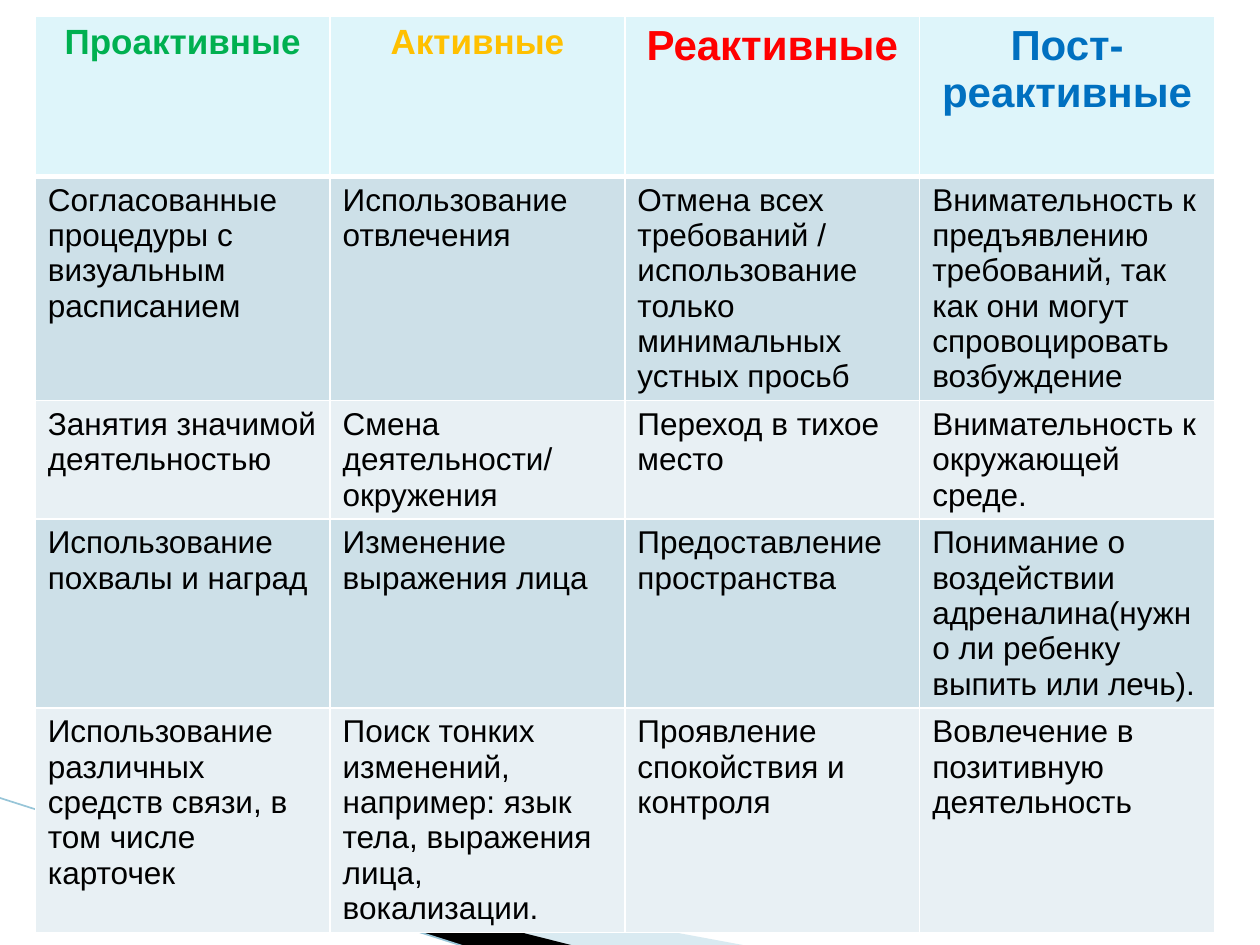
from lxml import etree
from pptx import Presentation
from pptx.dml.color import RGBColor
from pptx.enum.shapes import MSO_CONNECTOR
from pptx.enum.text import PP_ALIGN
from pptx.oxml.ns import qn
from pptx.util import Inches, Pt

CENTER, LEFT = PP_ALIGN.CENTER, PP_ALIGN.LEFT
STRAIGHT = MSO_CONNECTOR.STRAIGHT

WHITE = RGBColor(0xFF, 0xFF, 0xFF)
BLACK = RGBColor(0x00, 0x00, 0x00)
GREEN = RGBColor(0x00, 0xB0, 0x50)
AMBER = RGBColor(0xFF, 0xC0, 0x00)
RED = RGBColor(0xFF, 0x00, 0x00)
BLUE = RGBColor(0x00, 0x70, 0xC0)
HEADER_FILL = RGBColor(0xDE, 0xF5, 0xFA)
DARK_BAND = RGBColor(0xCD, 0xE0, 0xE8)
LIGHT_BAND = RGBColor(0xE8, 0xF0, 0xF4)
SWOOSH = RGBColor(0xA0, 0xCB, 0xDC)
SWOOSH_EDGE = RGBColor(0x97, 0xC5, 0xD8)

HEADINGS = [
    ("Проактивные", 20, GREEN),
    ("Активные", 20, AMBER),
    ("Реактивные", 24, RED),
    ("Пост-реактивные", 24, BLUE),
]
STRATEGIES = [
    ("Согласованные процедуры с визуальным расписанием",
     "Использование отвлечения",
     "Отмена всех требований / использование только минимальных устных просьб",
     "Внимательность к предъявлению требований, так как они могут "
     "спровоцировать возбуждение"),
    ("Занятия значимой деятельностью",
     "Смена деятельности/ окружения",
     "Переход в тихое место",
     "Внимательность к окружающей среде."),
    ("Использование похвалы и наград",
     "Изменение выражения лица",
     "Предоставление пространства",
     "Понимание о воздействии адреналина(нужно ли ребенку выпить или лечь)."),
    ("Использование различных средств связи, в том числе карточек",
     "Поиск тонких изменений, например: язык тела, выражения лица, вокализации.",
     "Проявление спокойствия и контроля",
     "Вовлечение в позитивную деятельность"),
]
ROW_HEIGHTS = [1.27, 1.78, 0.93, 1.5, 1.78]
COLUMN_WIDTH = 2.34


class SlideBuilder:
    font = "Arial"

    def __init__(self, slide):
        self.slide = slide

    def polygon(self, points, color, opacity=100):
        corners = [(Inches(x), Inches(y)) for x, y in points]
        builder = self.slide.shapes.build_freeform(*corners[0])
        builder.add_line_segments(corners[1:], close=True)
        shape = builder.convert_to_shape()
        shape.shadow.inherit = False
        shape.line.fill.background()
        shape.fill.solid()
        shape.fill.fore_color.rgb = color
        if opacity < 100:
            tint = shape.fill._xPr.find(".//" + qn("a:srgbClr"))
            etree.SubElement(tint, qn("a:alpha"), val=str(opacity * 1000))

    def line(self, start, end, color, width):
        ends = [Inches(value) for value in (*start, *end)]
        connector = self.slide.shapes.add_connector(STRAIGHT, *ends)
        connector.line.color.rgb = color
        connector.line.width = Pt(width)
        etree.SubElement(connector._element.spPr, qn("a:effectLst"))

    def table(self, left, top, column_widths, row_heights):
        frame = self.slide.shapes.add_table(
            len(row_heights), len(column_widths), Inches(left), Inches(top),
            Inches(sum(column_widths)), Inches(sum(row_heights)))
        for column, width in zip(frame.table.columns, column_widths):
            column.width = Inches(width)
        for row, height in zip(frame.table.rows, row_heights):
            row.height = Inches(height)
        return frame.table

    def cell(self, cell, text, fill, size=18, color=BLACK, bold=False,
             align=LEFT, top=1, bottom=1):
        cell.text = text
        paragraph = cell.text_frame.paragraphs[0]
        paragraph.alignment = align
        paragraph.font.name = self.font
        paragraph.font.size = Pt(size)
        paragraph.font.bold = bold
        paragraph.font.color.rgb = color
        # Borders come before the fill in the cell properties
        properties = cell._tc.get_or_add_tcPr()
        for side, width in (("L", 1), ("R", 1), ("T", top), ("B", bottom)):
            border = etree.SubElement(properties, qn("a:ln" + side),
                                      w=str(Pt(width)))
            paint = etree.SubElement(border, qn("a:solidFill"))
            etree.SubElement(paint, qn("a:srgbClr"), val=str(WHITE))
        cell.fill.solid()
        cell.fill.fore_color.rgb = fill


def main():
    presentation = Presentation()
    presentation.slide_width = Inches(10)
    presentation.slide_height = Inches(7.5)
    blank = presentation.slide_layouts[6]
    builder = SlideBuilder(presentation.slides.add_slide(blank))

    # Corner decoration
    builder.polygon([(0.55, 6.51), (5.95, 7.51), (4.56, 7.51), (0.55, 6.5)],
                    SWOOSH, opacity=40)
    builder.polygon([(0.53, 6.49), (4.57, 7.51), (3.72, 7.52), (0.54, 6.5)],
                    BLACK)
    builder.line((-0.01, 6.33), (3.71, 7.52), SWOOSH_EDGE, 0.95)

    # Strategy table
    strategies = builder.table(0.28, 0.13, [COLUMN_WIDTH] * len(HEADINGS),
                               ROW_HEIGHTS)
    for column, (heading, size, color) in enumerate(HEADINGS):
        builder.cell(strategies.cell(0, column), heading, HEADER_FILL, size,
                     color, bold=True, align=CENTER, bottom=3)
    for row, texts in enumerate(STRATEGIES, start=1):
        band = DARK_BAND if row % 2 else LIGHT_BAND
        for column, text in enumerate(texts):
            builder.cell(strategies.cell(row, column), text, band,
                         top=3 if row == 1 else 1)

    presentation.save("out.pptx")


if __name__ == "__main__":
    main()
